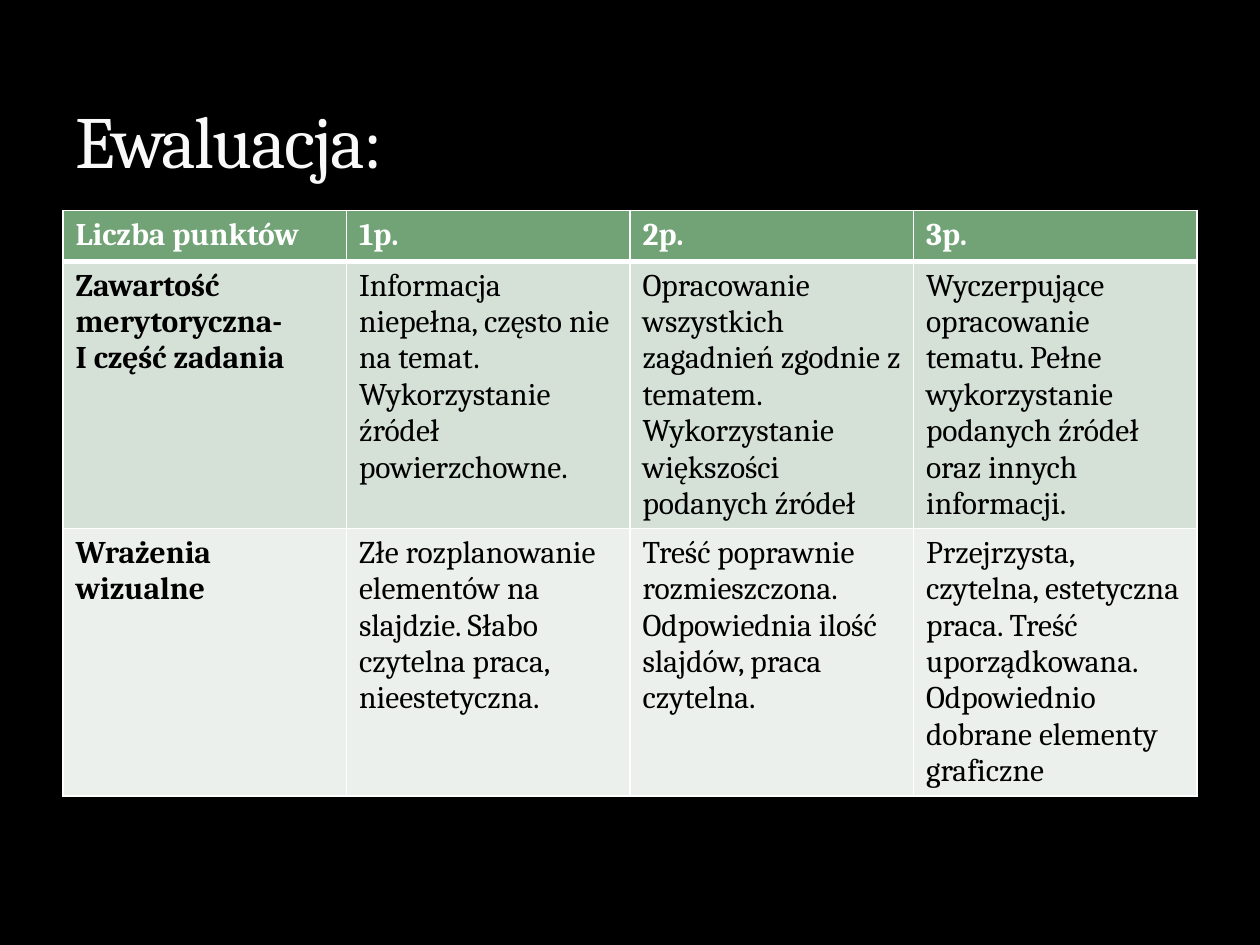
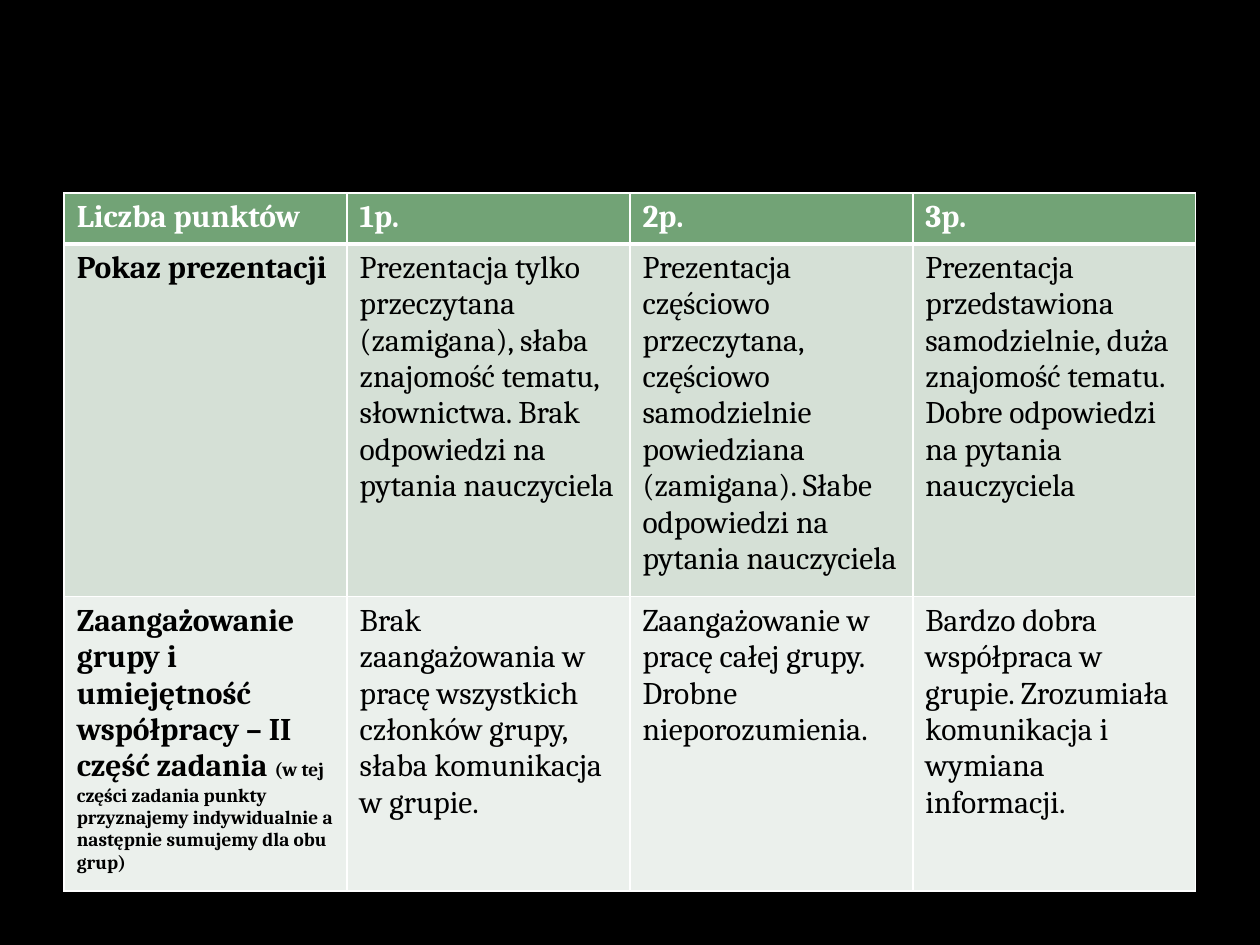
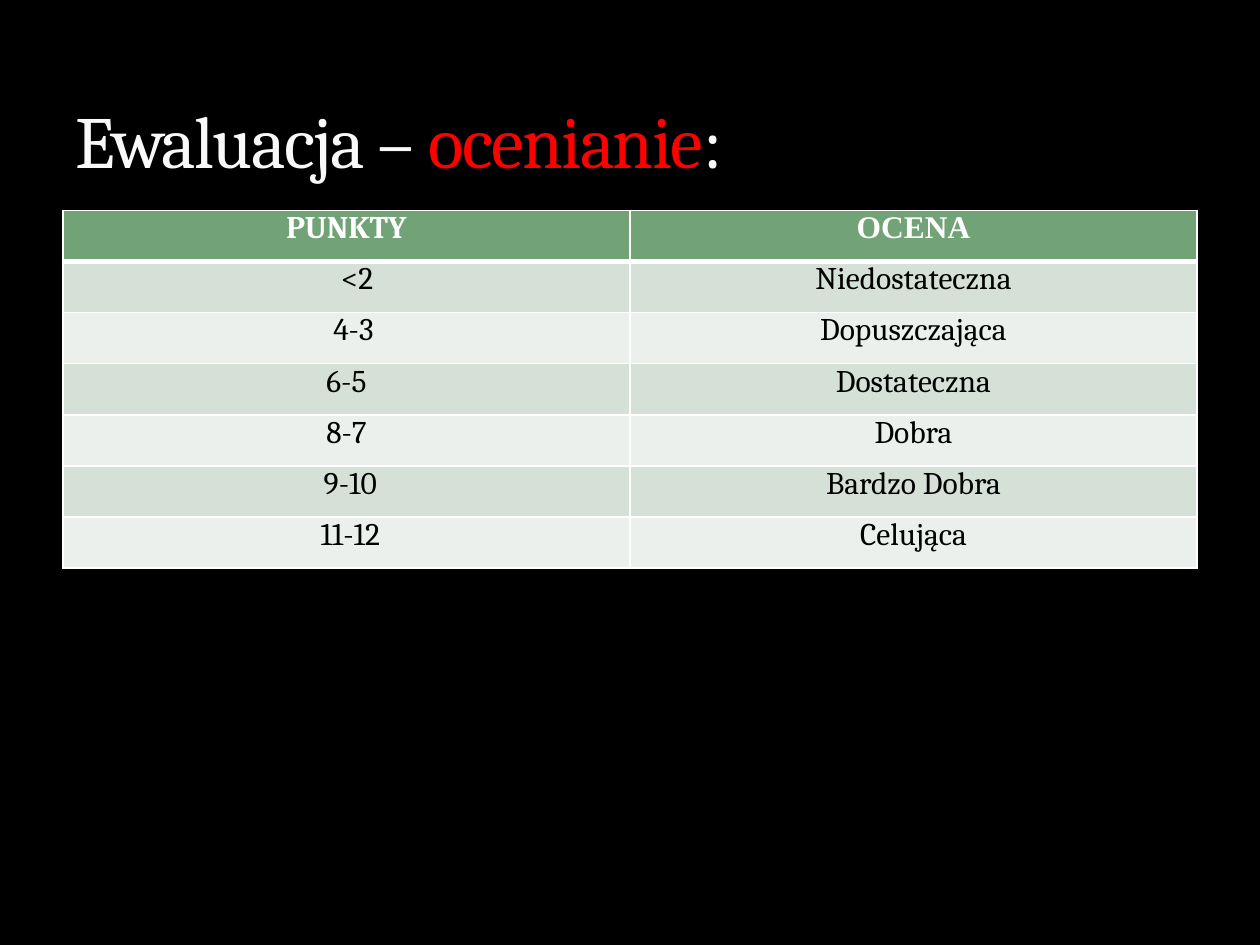
from lxml import etree
from pptx import Presentation
from pptx.dml.color import RGBColor
from pptx.enum.text import MSO_ANCHOR, PP_ALIGN
from pptx.oxml import parse_xml
from pptx.oxml.ns import nsdecls, qn
from pptx.util import Inches, Pt

BOTTOM = MSO_ANCHOR.BOTTOM
CENTER = PP_ALIGN.CENTER
LEFT = PP_ALIGN.LEFT

BLACK, WHITE, TITLE, RED = "000000", "FFFFFF", "F9F9F9", "FF0000"
HEADER, BANDS = "72A376", ["D5E0D6", "EBF0EC"]
ROW_HEIGHT = Pt(29.2)
OUTLINE = (
    f'<a:ln {nsdecls("a")} w="3175"><a:solidFill><a:srgbClr val="5B5E4B">'
    '<a:alpha val="25000"/></a:srgbClr></a:solidFill><a:prstDash val="solid"/></a:ln>'
)


def rgb(value):
    return RGBColor.from_string(value)


def add_run(p, text, size, color, bold=False, font="Cambria"):
    r = p.add_run()
    r.text = text
    r.font.size = Pt(size)
    r.font.color.rgb = rgb(color)
    r.font.bold = bold
    r.font.name = font
    return r


points = ["Liczba punktów", "1p.", "2p.", "3p."]
slides = [
    {
        "title": [("Ewaluacja:", TITLE)],
        "at": (0.5, 1.67, 9),
        "rows": [
            points,
            ["Zawartość merytoryczna-\nI część zadania",
             "Informacja niepełna, często nie na temat. Wykorzystanie źródeł powierzchowne.",
             "Opracowanie wszystkich zagadnień zgodnie z tematem. Wykorzystanie większości podanych źródeł",
             "Wyczerpujące opracowanie tematu. Pełne wykorzystanie podanych źródeł oraz innych informacji."],
            ["Wrażenia wizualne",
             "Złe rozplanowanie elementów na slajdzie. Słabo czytelna praca, nieestetyczna.",
             "Treść poprawnie rozmieszczona. Odpowiednia ilość slajdów, praca czytelna.",
             "Przejrzysta, czytelna, estetyczna praca. Treść uporządkowana. Odpowiednio dobrane elementy graficzne"],
        ],
    },
    {
        "title": [],
        "at": (0.51, 1.53, 8.98),
        "rows": [
            points,
            ["Pokaz prezentacji",
             "Prezentacja tylko przeczytana (zamigana), słaba znajomość tematu, słownictwa. Brak odpowiedzi na pytania nauczyciela",
             "Prezentacja częściowo przeczytana, częściowo samodzielnie powiedziana (zamigana). Słabe odpowiedzi na pytania nauczyciela",
             "Prezentacja przedstawiona samodzielnie, duża znajomość tematu. Dobre odpowiedzi na pytania nauczyciela"],
            ["Zaangażowanie grupy i umiejętność współpracy – II część zadania ",
             "Brak zaangażowania w pracę wszystkich członków grupy, słaba komunikacja w grupie.",
             "Zaangażowanie w pracę całej grupy. Drobne nieporozumienia.",
             "Bardzo dobra współpraca w grupie. Zrozumiała komunikacja i wymiana informacji."],
        ],
        "note": "(w tej części zadania punkty przyznajemy indywidualnie a następnie sumujemy dla obu grup)",
    },
    {
        "title": [("Ewaluacja – ", TITLE), ("ocenianie", RED), (":", TITLE)],
        "at": (0.5, 1.67, 9),
        "rows": [
            ["PUNKTY", "OCENA"],
            ["<2", "Niedostateczna"],
            ["4-3", "Dopuszczająca"],
            ["6-5", "Dostateczna"],
            ["8-7", "Dobra"],
            ["9-10", "Bardzo Dobra"],
            ["11-12", "Celująca"],
        ],
        "indents": [0, 0.17, 0.11, 0, 0, 0.06, 0.06],
    },
]

prs = Presentation()
prs.slide_width = Inches(10)
prs.slide_height = Inches(7.5)

for data in slides:
    s = prs.slides.add_slide(prs.slide_layouts[6])
    s.background.fill.solid()
    s.background.fill.fore_color.rgb = rgb(BLACK)

    rows = data["rows"]
    indents = data.get("indents")
    left, top, width = data["at"]
    tbl = s.shapes.add_table(
        len(rows), len(rows[0]), Inches(left), Inches(top),
        Inches(width), ROW_HEIGHT * len(rows),
    ).table

    for i, row in enumerate(rows):
        for j, text in enumerate(row):
            cell = tbl.cell(i, j)
            if indents:
                cell.margin_left = Inches(0.07 + (indents[i] if j == 0 else 0))
                cell.margin_right = Inches(0.07)
                cell.margin_top = cell.margin_bottom = 0

            tcPr = cell._tc.get_or_add_tcPr()
            for side in ("lnL", "lnR", "lnT", "lnB"):
                thick = (i, side) in [(0, "lnB"), (1, "lnT")]
                ln = etree.SubElement(tcPr, qn(f"a:{side}"), w=str(Pt(3 if thick else 1)))
                fill = etree.SubElement(ln, qn("a:solidFill"))
                etree.SubElement(fill, qn("a:srgbClr"), val=WHITE)
            cell.fill.solid()
            cell.fill.fore_color.rgb = rgb(BANDS[(i - 1) % 2] if i else HEADER)

            tf = cell.text_frame
            for k, line in enumerate(text.split("\n")):
                p = tf.add_paragraph() if k else tf.paragraphs[0]
                p.alignment = CENTER if indents else LEFT
                bold = i == 0 or (j == 0 and not indents)
                font = "Times New Roman" if text == "OCENA" else "Cambria"
                add_run(p, line, 18, BLACK if i else WHITE, bold, font)

    if "note" in data:
        add_run(tbl.cell(2, 0).text_frame.paragraphs[0], data["note"], 11, BLACK, True)

    if data["title"]:
        sp = s.shapes.add_textbox(Inches(0.5), Inches(0.17), Inches(9), Inches(1.33))
        tf = sp.text_frame
        tf.word_wrap = True
        tf.vertical_anchor = BOTTOM
        for text, color in data["title"]:
            r = add_run(tf.paragraphs[0], text, 42, color)
            rPr = r.font._element
            rPr.set("spc", "-100")
            rPr.insert(0, parse_xml(OUTLINE))

prs.save("out.pptx")
